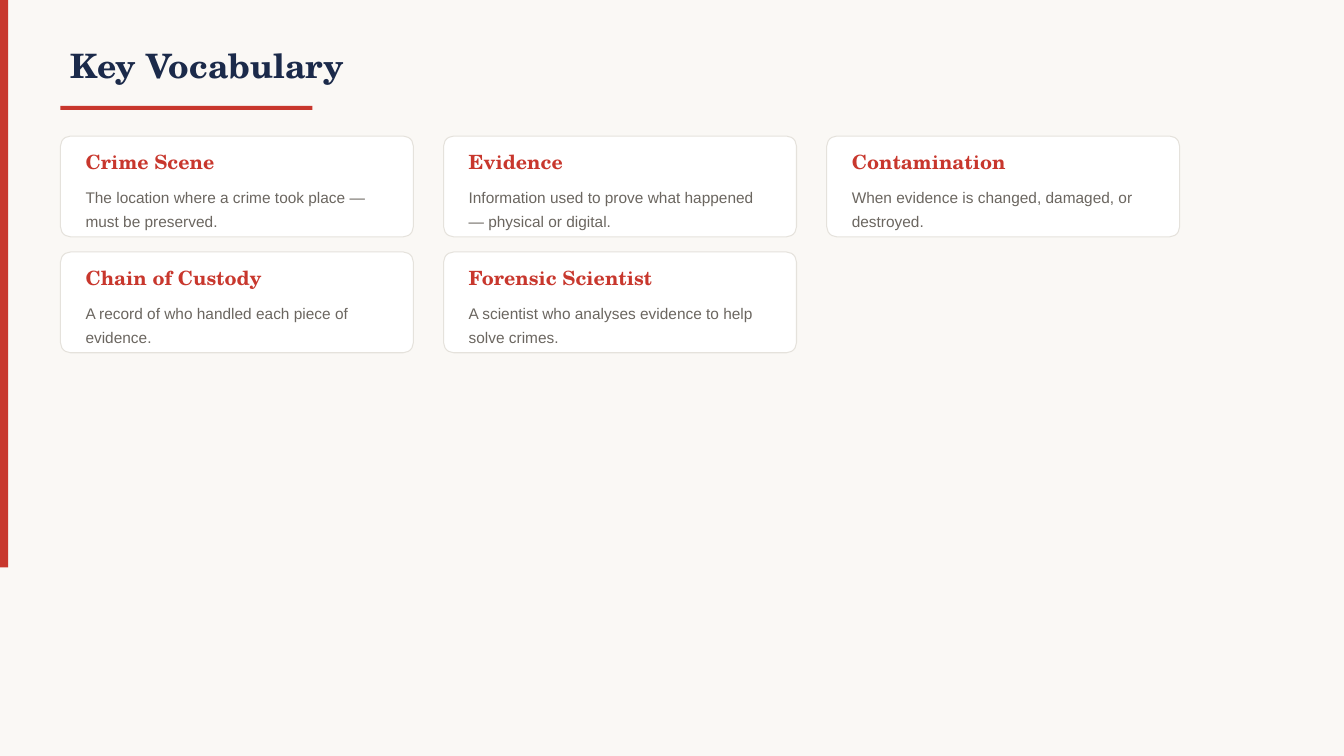
from pptx import Presentation
from pptx.dml.color import RGBColor
from pptx.enum.shapes import MSO_SHAPE
from pptx.enum.text import MSO_ANCHOR, MSO_AUTO_SIZE, PP_ALIGN
from pptx.util import Inches, Pt

RECTANGLE = MSO_SHAPE.RECTANGLE
ROUNDED = MSO_SHAPE.ROUNDED_RECTANGLE
MIDDLE = MSO_ANCHOR.MIDDLE
NO_FIT = MSO_AUTO_SIZE.NONE
LEFT = PP_ALIGN.LEFT

CREAM = RGBColor(0xFA, 0xF8, 0xF5)
RED = RGBColor(0xC8, 0x37, 0x2D)
NAVY = RGBColor(0x1B, 0x2A, 0x4A)
GREY = RGBColor(0x6B, 0x66, 0x60)
WHITE = RGBColor(0xFF, 0xFF, 0xFF)
BORDER = RGBColor(0xE5, 0xE2, 0xDC)

SERIF = "TeX Gyre Schola"
SANS = "Arial"

COLUMNS = 3
MARGIN, CARDS_TOP = 0.6, 1.35
CARD_WIDTH, CARD_HEIGHT = 3.5, 1
COLUMN_STEP, ROW_STEP = 3.8, 1.15
PADDING = 0.15

VOCABULARY = [
    ("Crime Scene", "The location where a crime took place — must be preserved."),
    ("Evidence", "Information used to prove what happened — physical or digital."),
    ("Contamination", "When evidence is changed, damaged, or destroyed."),
    ("Chain of Custody", "A record of who handled each piece of evidence."),
    ("Forensic Scientist", "A scientist who analyses evidence to help solve crimes."),
]


def add_panel(page, kind, left, top, width, height, fill, border=None):
    panel = page.shapes.add_shape(
        kind, Inches(left), Inches(top), Inches(width), Inches(height))
    panel.shadow.inherit = False
    panel.fill.solid()
    panel.fill.fore_color.rgb = fill
    if border is None:
        panel.line.fill.background()
    else:
        panel.line.color.rgb = border
        panel.line.width = Pt(0.75)
    return panel


def write_text(box, text, size, font, color, bold=False, spacing=None):
    frame = box.text_frame
    frame.word_wrap = True
    frame.auto_size = NO_FIT
    frame.vertical_anchor = MIDDLE
    para = frame.paragraphs[0]
    para.alignment = LEFT
    if spacing:
        para.line_spacing = spacing
    span = para.add_run()
    span.text = text
    span.font.size = Pt(size)
    span.font.name = font
    span.font.bold = bold
    span.font.color.rgb = color


def add_title(page, text):
    title = page.shapes.title
    title.left, title.top = Inches(MARGIN), Inches(0.3)
    title.width, title.height = Inches(10), Inches(0.7)
    write_text(title, text, 24, SERIF, NAVY, bold=True)


def add_label(page, left, top, height, text, size, font, color, **style):
    box = page.shapes.add_textbox(
        Inches(left), Inches(top), Inches(CARD_WIDTH - 2 * PADDING), Inches(height))
    write_text(box, text, size, font, color, **style)


def add_card(page, left, top, term, meaning):
    card = add_panel(page, ROUNDED, left, top, CARD_WIDTH, CARD_HEIGHT, WHITE, BORDER)
    card.adjustments[0] = 0.1
    text_left = left + PADDING
    add_label(page, text_left, top + 0.08, 0.35, term, 14, SERIF, RED, bold=True)
    add_label(page, text_left, top + 0.45, 0.5, meaning, 11, SANS, GREY, spacing=1.3)


def main():
    deck = Presentation()
    deck.slide_width, deck.slide_height = Inches(13.33), Inches(7.5)
    page = deck.slides.add_slide(deck.slide_layouts.get_by_name("Title Only"))
    page.background.fill.solid()
    page.background.fill.fore_color.rgb = CREAM

    add_panel(page, RECTANGLE, 0, 0, 0.08, 5.63, RED)
    add_title(page, "Key Vocabulary")
    add_panel(page, RECTANGLE, MARGIN, 1.05, 2.5, 0.04, RED)
    for index, (term, meaning) in enumerate(VOCABULARY):
        row, column = divmod(index, COLUMNS)
        add_card(page, MARGIN + column * COLUMN_STEP, CARDS_TOP + row * ROW_STEP,
                 term, meaning)
    deck.save("out.pptx")


if __name__ == "__main__":
    main()
